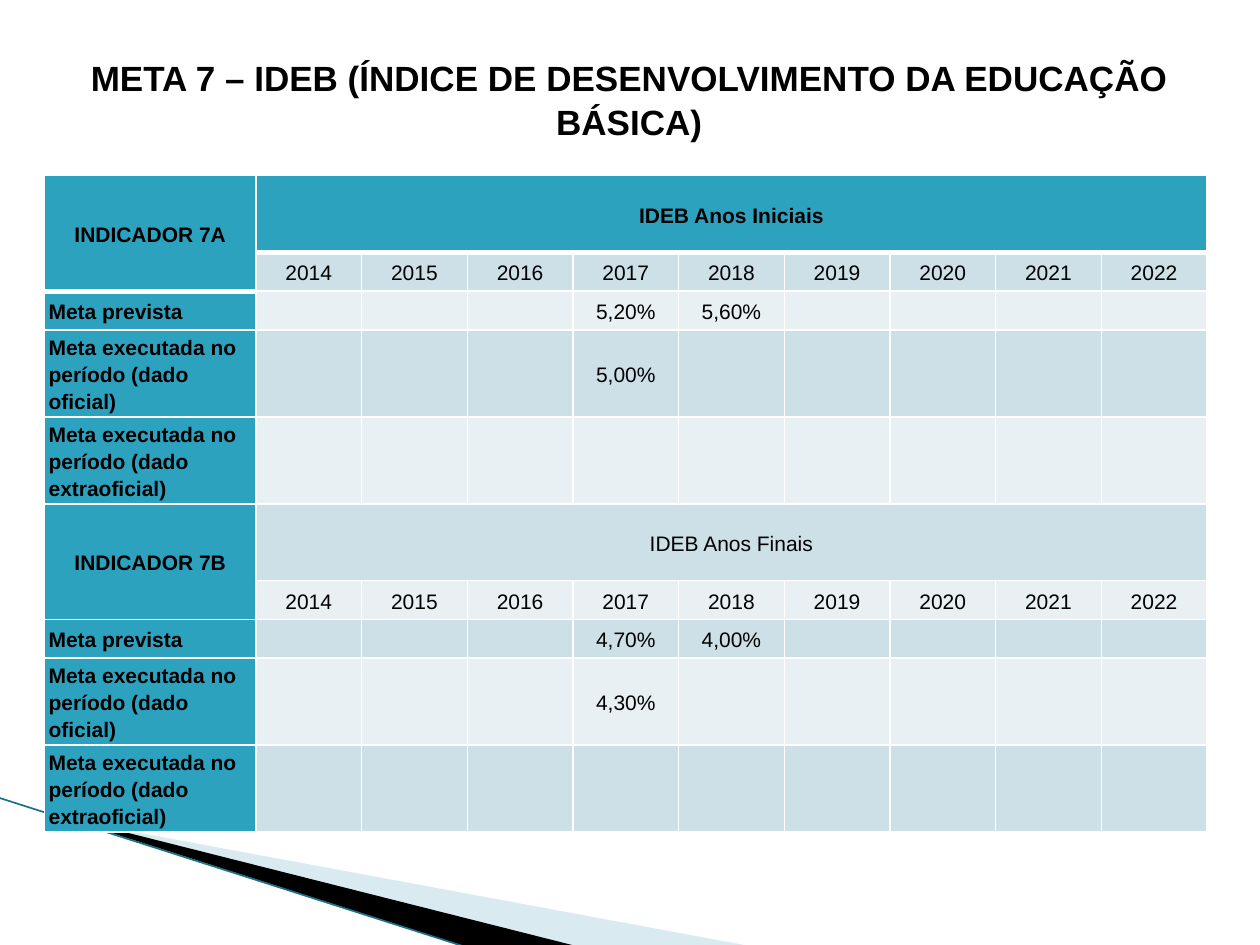
from lxml.etree import SubElement
from pptx import Presentation
from pptx.dml.color import RGBColor
from pptx.enum.shapes import MSO_CONNECTOR
from pptx.enum.text import MSO_ANCHOR, PP_ALIGN
from pptx.oxml.ns import qn
from pptx.util import Cm, Pt

BLACK = RGBColor(0x00, 0x00, 0x00)
WHITE = RGBColor(0xFF, 0xFF, 0xFF)
TEAL = RGBColor(0x2D, 0xA2, 0xBF)
DARK_TEAL = RGBColor(0x1B, 0x70, 0x87)
SWOOSH_BLUE = RGBColor(0xA0, 0xCB, 0xDC)
BANDS = RGBColor(0xCD, 0xE0, 0xE8), RGBColor(0xE8, 0xF0, 0xF4)

FONT = "Arial"
TITLE = "META 7 – IDEB (ÍNDICE DE DESENVOLVIMENTO DA EDUCAÇÃO BÁSICA)"
YEARS = range(2014, 2023)
GOAL = "Meta prevista"
OFFICIAL = "Meta executada no período (dado oficial)"
UNOFFICIAL = "Meta executada no período (dado extraoficial)"
INDICATORS = [
    ("INDICADOR 7A", "IDEB Anos Iniciais",
     {GOAL: {2017: "5,20%", 2018: "5,60%"}, OFFICIAL: {2017: "5,00%"}, UNOFFICIAL: {}}),
    ("INDICADOR 7B", "IDEB Anos Finais",
     {GOAL: {2017: "4,70%", 2018: "4,00%"}, OFFICIAL: {2017: "4,30%"}, UNOFFICIAL: {}}),
]
BLOCK_HEIGHTS = [1.55, 0.78, 0.78, 1.55, 1.55]
LABEL_WIDTH, YEAR_WIDTH = 4.26, 2.13


def add_span(para, text, size, bold):
    span = para.add_run()
    span.text = text
    span.font.name = FONT
    span.font.size = Pt(size)
    span.font.bold = bold
    span.font.color.rgb = BLACK


def add_swoosh(page, points, color, opacity=100):
    start, *others = [(Cm(x), Cm(y)) for x, y in points]
    builder = page.shapes.build_freeform(*start)
    builder.add_line_segments(others, close=True)
    swoosh = builder.convert_to_shape()
    swoosh.shadow.inherit = False
    swoosh.fill.solid()
    swoosh.fill.fore_color.rgb = color
    swoosh.line.fill.background()
    if opacity < 100:
        color_xml = swoosh._element.spPr.find(".//" + qn("a:srgbClr"))
        SubElement(color_xml, qn("a:alpha"), val=str(opacity * 1000))


def add_line(page, start, end, color, width):
    ends = [Cm(value) for value in (*start, *end)]
    line = page.shapes.add_connector(MSO_CONNECTOR.STRAIGHT, *ends)
    line.line.color.rgb = color
    line.line.width = Pt(width)
    SubElement(line._element.spPr, qn("a:effectLst"))


def add_title(page):
    box = page.shapes.add_textbox(Cm(1.09), Cm(0.92), Cm(23.19), Cm(17.35))
    frame = box.text_frame
    frame.word_wrap = True
    frame.margin_top = Cm(0.17)
    para = frame.paragraphs[0]
    para.alignment = PP_ALIGN.CENTER
    para.line_spacing = 1.05
    add_span(para, TITLE, 20, True)


def set_borders(cell, widths):
    for side, width in widths.items():
        border = SubElement(cell._tc.get_or_add_tcPr(), qn(f"a:ln{side}"), w=str(Pt(width)))
        fill = SubElement(border, qn("a:solidFill"))
        SubElement(fill, qn("a:srgbClr"), val=str(WHITE))


def style_cell(cell, color, top_row, heavy_bottom):
    """Give a cell its borders, fill, insets and an empty 12 pt paragraph."""
    widths = {"L": 1, "R": 1}
    if top_row:
        widths["T"] = 1
    widths["B"] = 3 if heavy_bottom else 1
    set_borders(cell, widths)
    cell.fill.solid()
    cell.fill.fore_color.rgb = color
    cell.vertical_anchor = MSO_ANCHOR.MIDDLE
    cell.margin_left = cell.margin_right = Cm(0.08)
    cell.margin_top = cell.margin_bottom = 0
    para = cell.text_frame.paragraphs[0]
    para.line_spacing = 1.15
    SubElement(para._p, qn("a:endParaRPr"), sz="1200")


def write_cell(cell, text, bold=False, align=PP_ALIGN.CENTER):
    para = cell.text_frame.paragraphs[0]
    para.alignment = align
    add_span(para, text, 12, bold)


def fill_block(table, first, indicator, heading, measures):
    """Write one indicator, whose heading is in row number first."""
    last_column = len(YEARS)
    table.cell(first, 0).merge(table.cell(first + 1, 0))
    table.cell(first, 1).merge(table.cell(first, last_column))
    write_cell(table.cell(first, 0), indicator, bold=True)
    write_cell(table.cell(first, 1), heading, bold=first == 0)
    for column, year in enumerate(YEARS, 1):
        write_cell(table.cell(first + 1, column), str(year))
    for row, (label, values) in enumerate(measures.items(), first + 2):
        write_cell(table.cell(row, 0), label, bold=True, align=PP_ALIGN.LEFT)
        for year, value in values.items():
            write_cell(table.cell(row, year - YEARS[0] + 1), value)


def add_indicator_table(page):
    heights = BLOCK_HEIGHTS * len(INDICATORS)
    widths = [LABEL_WIDTH] + [YEAR_WIDTH] * len(YEARS)
    frame = page.shapes.add_table(len(heights), len(widths), Cm(0.9), Cm(3.54),
                                  Cm(sum(widths)), Cm(sum(heights)))
    table = frame.table
    table.first_row = table.horz_banding = False
    for column, width in zip(table.columns, widths):
        column.width = Cm(width)
    for number, (row, height) in enumerate(zip(table.rows, heights)):
        row.height = Cm(height)
        for column, cell in enumerate(row.cells):
            color = TEAL if number == 0 or column == 0 else BANDS[(number + 1) % 2]
            heavy = number == 0 or (number == 1 and column == 0)
            style_cell(cell, color, number == 0, heavy)
    for index, block in enumerate(INDICATORS):
        fill_block(table, index * len(BLOCK_HEIGHTS), *block)


def main():
    deck = Presentation()
    deck.slide_width, deck.slide_height = Cm(25.4), Cm(19.05)
    page = deck.slides.add_slide(deck.slide_layouts[6])
    add_swoosh(page, [(1.4, 16.53), (15.11, 19.07), (11.58, 19.07), (1.4, 16.51)],
               SWOOSH_BLUE, opacity=40)
    add_swoosh(page, [(1.35, 16.48), (11.61, 19.07), (9.45, 19.1), (1.37, 16.51)], BLACK)
    add_line(page, (-0.03, 16.08), (9.42, 19.1), DARK_TEAL, 0.95)
    add_title(page)
    add_indicator_table(page)
    deck.save("out.pptx")


if __name__ == "__main__":
    main()
